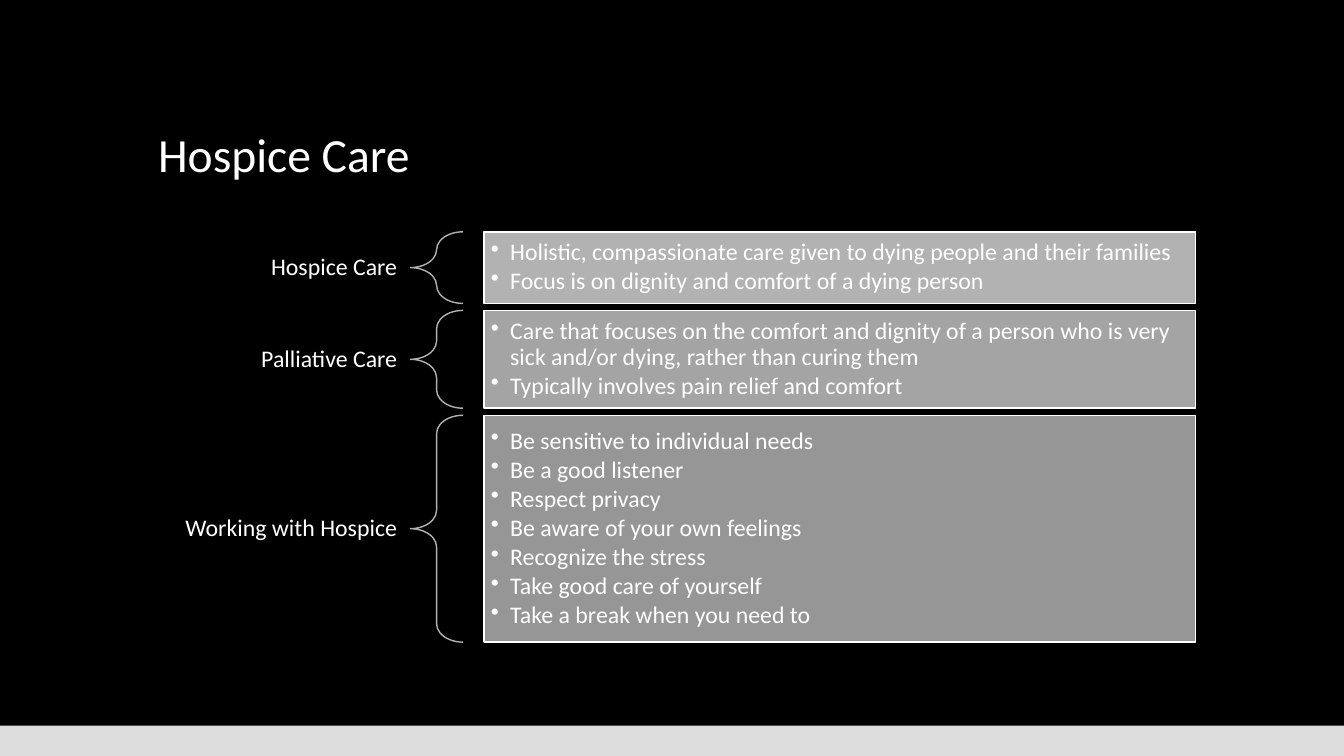
from lxml.etree import SubElement
from pptx import Presentation
from pptx.dml.color import RGBColor
from pptx.enum.shapes import MSO_SHAPE
from pptx.enum.text import MSO_ANCHOR, PP_ALIGN
from pptx.oxml.ns import qn
from pptx.util import Inches, Pt

HUES = {"back": "000000", "text": "FFFFFF", "bar": "DDDDDD", "brace": "B2B2B2",
        "top": "B2B2B2", "mid": "A4A4A4", "low": "969696"}

# Label, fill, height and points of each row
ROWS = [
    ("Hospice Care", "top", 0.71, [
        "Holistic, compassionate care given to dying people and their families",
        "Focus is on dignity and comfort of a dying person"]),
    ("Palliative Care", "mid", 0.97, [
        "Care that focuses on the comfort and dignity of a person who is very "
        "sick and/or dying, rather than curing them",
        "Typically involves pain relief and comfort"]),
    ("Working with Hospice", "low", 2.25, [
        "Be sensitive to individual needs",
        "Be a good listener",
        "Respect privacy",
        "Be aware of your own feelings",
        "Recognize the stress",
        "Take good care of yourself",
        "Take a break when you need to"]),
]
LEFT, TOP, GAP = 1.47, 2.3, 0.07


class Deck:
    font = "Calibri"
    size = 17

    def __init__(self, slide):
        self.slide = slide

    def hue(self, name):
        return RGBColor.from_string(HUES[name])

    def shape(self, kind, box, fill=None, line=None):
        item = self.slide.shapes.add_shape(kind, *map(Inches, box))
        item.shadow.inherit = False
        if fill:
            item.fill.solid()
            item.fill.fore_color.rgb = self.hue(fill)
        else:
            item.fill.background()
        if line:
            item.line.color.rgb = self.hue(line)
            item.line.width = Pt(1)
        else:
            item.line.fill.background()
        return item

    def words(self, item, text, pad, size=None, align=PP_ALIGN.LEFT,
              anchor=MSO_ANCHOR.MIDDLE):
        frame = item.text_frame
        frame.word_wrap = True
        frame.vertical_anchor = anchor
        frame.margin_left = frame.margin_right = Inches(pad[0])
        frame.margin_top = frame.margin_bottom = Inches(pad[1])
        frame.text = text
        for para in frame.paragraphs:
            para.alignment = align
            para.line_spacing = 0.9
            for run in para.runs:
                run.font.name = self.font
                run.font.size = Pt(size or self.size)
                run.font.color.rgb = self.hue("text")

    def label(self, text, box, pad=(0.13, 0.05), **style):
        item = self.slide.shapes.add_textbox(*map(Inches, box))
        self.words(item, text, pad, **style)

    def brace(self, box):
        item = self.shape(MSO_SHAPE.LEFT_BRACE, box, line="brace")
        item.adjustments[0] = 0.35

    def panel(self, points, box, fill):
        item = self.shape(MSO_SHAPE.RECTANGLE, box, fill, "text")
        self.words(item, "\n".join(points), (0.07, 0.07))
        for para in item.text_frame.paragraphs:
            para.level = 1
            para.space_after = Pt(2.4)
            props = para._p.get_or_add_pPr()
            props.set("marL", str(Inches(0.19)))
            props.set("indent", str(-Inches(0.19)))
            SubElement(props, qn("a:buChar")).set("char", "•")


def main():
    show = Presentation()
    show.slide_width, show.slide_height = Inches(13.33), Inches(7.5)
    slide = show.slides.add_slide(show.slide_layouts[6])
    deck = Deck(slide)

    # Background and bottom bar
    slide.background.fill.solid()
    slide.background.fill.fore_color.rgb = deck.hue("back")
    deck.shape(MSO_SHAPE.RECTANGLE, (0, 7.2, 13.33, 0.3), "bar")

    # Title
    deck.label("Hospice Care", (LEFT, 0.51, 10.4, 1.35), (0.1, 0.05),
               size=34, anchor=MSO_ANCHOR.BOTTOM)

    # Rows of label, brace and panel
    top = TOP
    for name, fill, high, points in ROWS:
        deck.label(name, (LEFT, top + (high - 0.37) / 2, 2.6, 0.37),
                   align=PP_ALIGN.RIGHT)
        deck.brace((4.07, top, 0.52, high))
        deck.panel(points, (4.8, top, 7.06, high), fill)
        top += high + GAP

    show.save("out.pptx")


if __name__ == "__main__":
    main()
